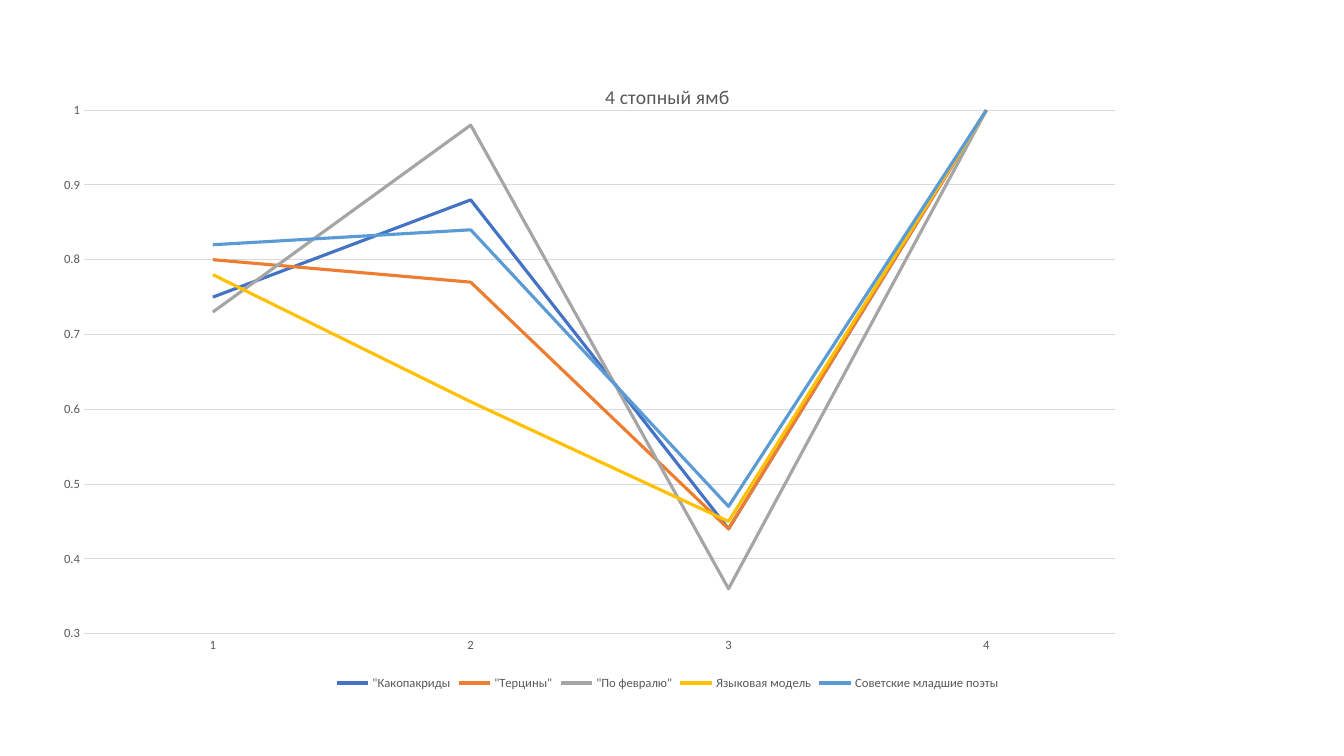
import pptx
import pptx.chart.data
import pptx.dml.color
import pptx.enum.chart
import pptx.oxml
import pptx.util

COLORS = {
    "text": "595959",
    "grid": "D9D9D9",
    "blue": "4472C4",
    "orange": "ED7D31",
    "gray": "A5A5A5",
    "yellow": "FFC000",
    "light blue": "5B9BD5",
}
SERIES = [
    ('"Какопакриды', "blue", (0.75, 0.88, 0.44, 1)),
    ('"Терцины"', "orange", (0.8, 0.77, 0.44, 1)),
    ('"По февралю"', "gray", (0.73, 0.98, 0.36, 1)),
    ("Языковая модель", "yellow", (0.78, 0.61, 0.45, 1)),
    ("Советские младшие поэты", "light blue", (0.82, 0.84, 0.47, 1)),
]
PLOT_AREA = {"x": 0.031, "y": 0.077, "w": 0.829, "h": 0.827}


def style_font(font, size):
    font.name = "Calibri"
    font.size = pptx.util.Pt(size)
    font.bold = False
    font.color.rgb = pptx.dml.color.RGBColor.from_string(COLORS["text"])


def style_line(line, color, width):
    line.color.rgb = pptx.dml.color.RGBColor.from_string(COLORS[color])
    line.width = pptx.util.Pt(width)


presentation = pptx.Presentation()
presentation.slide_width = pptx.util.Inches(13.33)
presentation.slide_height = pptx.util.Inches(7.5)
slide = presentation.slides.add_slide(presentation.slide_layouts[6])

# Line chart
chart_data = pptx.chart.data.CategoryChartData()
chart_data.categories = ["1", "2", "3", "4"]
for name, color, values in SERIES:
    chart_data.add_series(name, values)
chart = slide.shapes.add_chart(
    pptx.enum.chart.XL_CHART_TYPE.LINE,
    pptx.util.Inches(0.45), pptx.util.Inches(0.61),
    pptx.util.Inches(12.34), pptx.util.Inches(6.28),
    chart_data,
).chart
style_font(chart.font, 9)
for series, (name, color, values) in zip(chart.plots[0].series, SERIES):
    series.smooth = False
    series.marker.style = pptx.enum.chart.XL_MARKER_STYLE.NONE
    style_line(series.format.line, color, 2.25)
chart.plots[0].vary_by_categories = False

# Chart title
chart.has_title = True
title_run = chart.chart_title.text_frame.paragraphs[0].add_run()
title_run.text = "4 стопный ямб"
style_font(title_run.font, 14)
chart.chart_title.include_in_layout = False

# Legend
chart.has_legend = True
chart.legend.position = pptx.enum.chart.XL_LEGEND_POSITION.BOTTOM
chart.legend.include_in_layout = False
style_font(chart.legend.font, 9)

# Axes
for axis in (chart.category_axis, chart.value_axis):
    axis.major_tick_mark = pptx.enum.chart.XL_TICK_MARK.NONE
    axis.minor_tick_mark = pptx.enum.chart.XL_TICK_MARK.NONE
    style_font(axis.tick_labels.font, 9)
style_line(chart.category_axis.format.line, "grid", 0.75)
chart.value_axis.format.line.fill.background()
chart.value_axis.minimum_scale = 0.3
chart.value_axis.maximum_scale = 1
chart.value_axis.major_unit = 0.1
chart.value_axis.has_major_gridlines = True
style_line(chart.value_axis.major_gridlines.format.line, "grid", 0.75)

# Inner plot area as shares of the chart
plot_area = chart.element.chart.plotArea
for old_layout in plot_area.findall(pptx.oxml.ns.qn("c:layout")):
    plot_area.remove(old_layout)
settings = '<c:layoutTarget val="inner"/><c:xMode val="edge"/><c:yMode val="edge"/>'
settings += "".join(f'<c:{side} val="{share}"/>' for side, share in PLOT_AREA.items())
plot_area.insert(0, pptx.oxml.parse_xml(
    f'<c:layout {pptx.oxml.ns.nsdecls("c")}>'
    f"<c:manualLayout>{settings}</c:manualLayout></c:layout>"
))

presentation.save("out.pptx")
